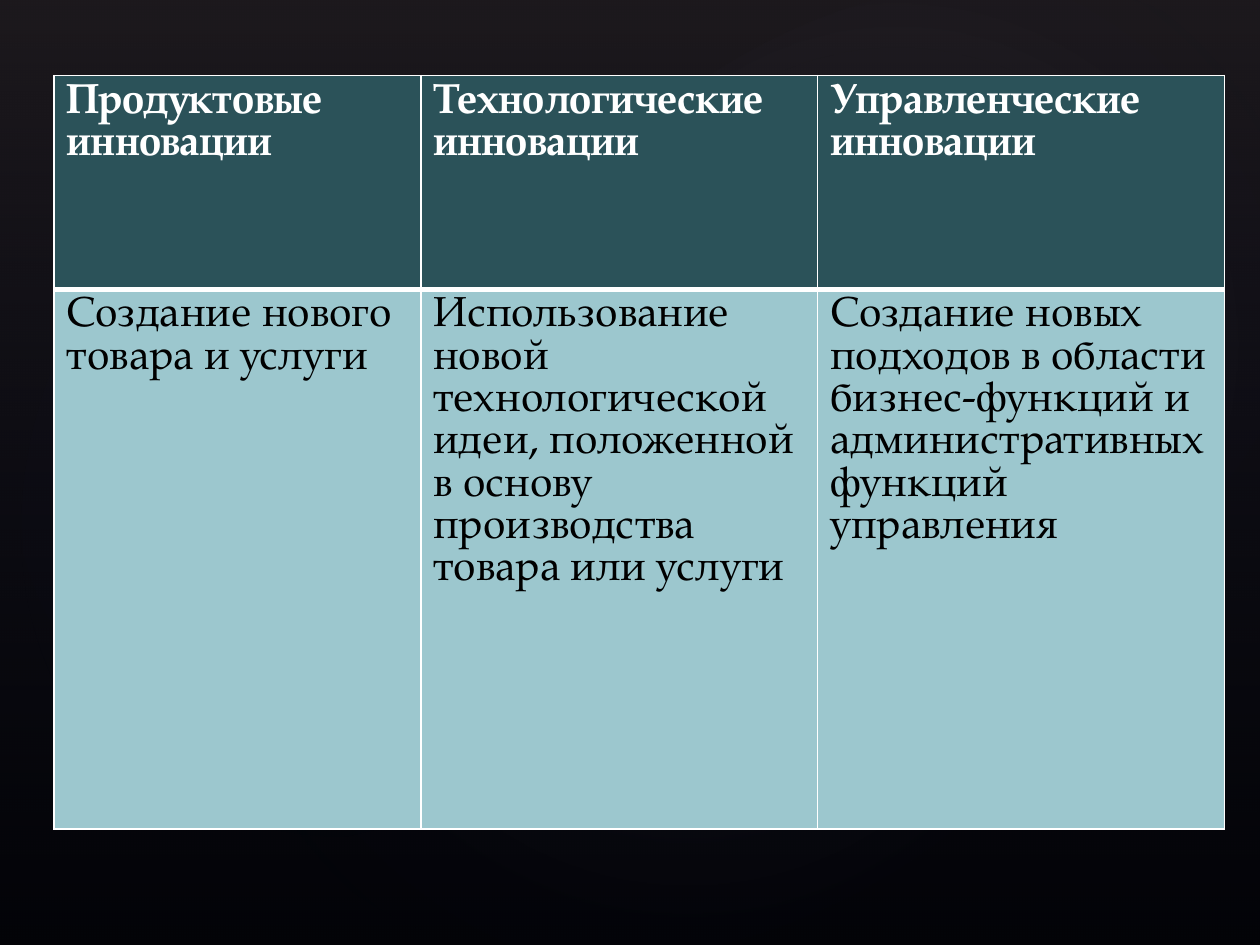
import pptx
import pptx.util
import pptx.dml.color
import pptx.enum.shapes
import pptx.oxml
import pptx.oxml.ns

Inches, Pt = pptx.util.Inches, pptx.util.Pt
Color = pptx.dml.color.RGBColor.from_string
NS = pptx.oxml.ns.nsdecls("a")

theme = {
    "back": "000000", "head": "2B5259", "body": "9CC7CE",
    "light": "FFFFFF", "dark": "000000",
    "font": "TeX Gyre Pagella", "size": 24, "pitch": 24.2,
}


def glow(kind, box, turn, stops, shade):
    """Add a borderless shape with a translucent gradient fill."""
    shape = slide.shapes.add_shape(kind, *map(Inches, box))
    shape.rotation = turn
    shape.shadow.inherit = False
    shape.line.fill.background()
    marks = "".join(
        f'<a:gs pos="{pos * 1000}"><a:srgbClr val="{color}">'
        f'<a:alpha val="{alpha * 1000}"/></a:srgbClr></a:gs>'
        for pos, color, alpha in stops)
    fill = pptx.oxml.parse_xml(
        f'<a:gradFill {NS} rotWithShape="1"><a:gsLst>{marks}</a:gsLst>{shade}</a:gradFill>')
    shape._element.spPr.find(pptx.oxml.ns.qn("a:prstGeom")).addnext(fill)


def edge(cell, side, width):
    """Draw one cell border; sides must come in the order L, R, T, B."""
    line = pptx.oxml.parse_xml(
        f'<a:ln{side} {NS} w="{Pt(width)}"><a:solidFill>'
        f'<a:srgbClr val="{theme["light"]}"/></a:solidFill></a:ln{side}>')
    cell._tc.get_or_add_tcPr().append(line)


deck = pptx.Presentation()
deck.slide_width, deck.slide_height = Inches(10), Inches(7.5)
slide = deck.slides.add_slide(deck.slide_layouts[6])
slide.background.fill.solid()
slide.background.fill.fore_color.rgb = Color(theme["back"])

# Backdrop
kinds = pptx.enum.shapes.MSO_SHAPE
glow(kinds.RECTANGLE, (0, 0, 10, 7.5), 0,
     [(0, "504652", 36), (100, "242852", 10)], '<a:lin ang="5400000" scaled="0"/>')
round_shade = ('<a:path path="circle"><a:fillToRect l="50000" t="50000" '
               'r="50000" b="50000"/></a:path>')
for box, turn, alpha in [
    ((1.5, 1.14, 7.92, 6.24), 328.7, 7),
    ((-0.3, 1.28, 6.06, 4.9), 294.3, 8),
    ((3.58, 0.13, 7.09, 5.2), 328.7, 8),
]:
    glow(kinds.OVAL, box, turn,
         [(0, "C4BCC6", alpha), (58, "242852", 0), (100, "242852", 0)], round_shade)

# Table of innovation types
rows = [
    ["Продуктовые инновации", "Технологические инновации", "Управленческие инновации"],
    ["Создание нового товара и услуги",
     "Использование новой технологической идеи, положенной в основу "
     "производства товара или услуги",
     "Создание новых подходов в области бизнес-функций и "
     "административных функций управления"],
]
widths, heights = [2.91, 3.15, 3.23], [1.7, 4.28]
table = slide.shapes.add_table(
    len(rows), len(widths), Inches(0.43), Inches(0.6),
    Inches(sum(widths)), Inches(sum(heights))).table
for col, width in zip(table.columns, widths):
    col.width = Inches(width)
for row, height in zip(table.rows, heights):
    row.height = Inches(height)

for y, texts in enumerate(rows):
    head = y == 0
    for x, text in enumerate(texts):
        cell = table.cell(y, x)
        for side in "LRTB":
            thick = side == ("B" if head else "T")
            edge(cell, side, 3 if thick else 1)
        cell.fill.solid()
        cell.fill.fore_color.rgb = Color(theme["head" if head else "body"])
        para = cell.text_frame.paragraphs[0]
        para.line_spacing = Pt(theme["pitch"])
        run = para.add_run()
        run.text = text
        run.font.name = theme["font"]
        run.font.size = Pt(theme["size"])
        run.font.bold = head
        run.font.color.rgb = Color(theme["light" if head else "dark"])

deck.save("out.pptx")
